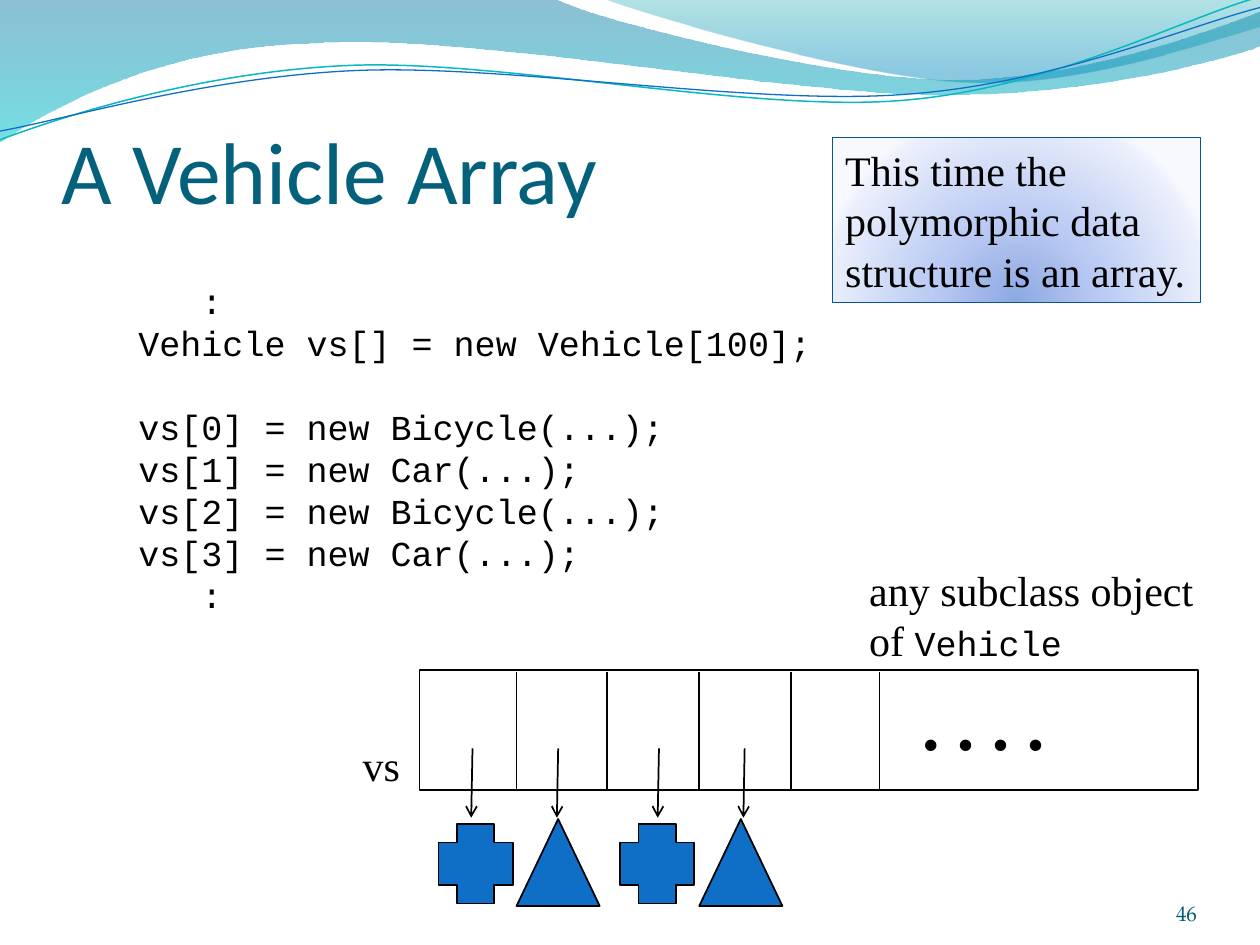
from dataclasses import dataclass
from lxml import etree
from pptx import Presentation
from pptx.dml.color import RGBColor
from pptx.enum.shapes import MSO_CONNECTOR as Link, MSO_SHAPE as Kind
from pptx.enum.text import MSO_ANCHOR as Anchor, PP_ALIGN as Align
from pptx.oxml import parse_xml
from pptx.oxml.ns import nsdecls, qn
from pptx.util import Inches, Pt


@dataclass(frozen=True)
class Theme:
    ink: str = "000000"
    blue: str = "0F6FC6"
    teal: str = "0AB8BF"
    head: str = "04617B"
    page: str = "045D75"
    edge: str = "095295"
    sans: str = "Calibri"
    serif: str = "Times New Roman"
    mono: str = "Courier New"
    folio: str = "TeX Gyre Pagella"
    title: int = 50
    dots: int = 40
    body: int = 24
    code: int = 20
    small: int = 12


T = Theme()
DOWN = '<a:lin ang="5400000" scaled="0"/>'
GLOW = ('<a:path path="circle"><a:fillToRect l="50000" t="130000" '
        'r="50000" b="-30000"/></a:path>')

# Each wave: start point, then line ends (2 numbers) and Bezier curves (6)
BAND = [(0, 0), (4.4, -.01), (4.76, .17, 6.64, .63, 7.58, .63),
        (8.53, .63, 9.58, .26, 10, .09), (10.01, .36),
        (9.83, .44, 8.7, .76, 7.46, .75), (6.22, .75, 3.82, .28, 2.57, .34),
        (1.29, .36, .46, .83, -.01, 1.13), (0, 0)]
CREST = [(4.79, -.01), (5.09, .11, 6.82, .62, 7.69, .65),
         (8.56, .69, 9.61, .32, 10, .21), (10, 0), (4.79, -.01)]
LINES = [
    (T.teal, .85, [(0, 1.11), (.48, .93, 1.58, .57, 2.77, .52),
                   (3.95, .47, 5.93, .89, 7.13, .8),
                   (8.33, .71, 9.38, .15, 9.98, -.02)]),
    (T.blue, .75, [(0, 1.04), (.47, .96, 1.64, .61, 2.83, .56),
                   (4.03, .51, 5.97, .84, 7.17, .75),
                   (8.36, .67, 9.41, .21, 10, .06)])]

CODE = ["\t\t:", "Vehicle vs[] = new Vehicle[100];", "",
        "vs[0] = new Bicycle(...);", "vs[1] = new Car(...);",
        "vs[2] = new Bicycle(...);", "vs[3] = new Car(...);", "\t:"]


def color(code):
    return RGBColor.from_string(code)


def paint(shape, fill=None, edge=None, width=1):
    shape.shadow.inherit = False
    if fill:
        shape.fill.solid()
        shape.fill.fore_color.rgb = color(fill)
    else:
        shape.fill.background()
    if edge:
        shape.line.color.rgb = color(edge)
        shape.line.width = Pt(width)
    else:
        shape.line.fill.background()


def blend(shape, stops, form):
    """Swap the solid fill for a gradient of (position, colour, alpha)."""
    marks = "".join(
        f'<a:gs pos="{pos * 1000}"><a:srgbClr val="{code}">'
        f'<a:alpha val="{alpha * 1000}"/></a:srgbClr></a:gs>'
        for pos, code, alpha in stops)
    grad = parse_xml(f'<a:gradFill {nsdecls("a")} rotWithShape="1">'
                     f'<a:gsLst>{marks}</a:gsLst>{form}</a:gradFill>')
    props = shape._element.spPr
    props.replace(props.find(qn("a:solidFill")), grad)


def style(para, font, size, code=T.ink, bold=False):
    for run in para.runs:
        run.font.name, run.font.size = font, Pt(size)
        run.font.color.rgb, run.font.bold = color(code), bold


def label(slide, box, text, font, size, code=T.ink, bold=False,
          wrap=True, pad=(.1, .05, .1, .05), anchor=Anchor.TOP):
    frame = slide.shapes.add_textbox(*map(Inches, box)).text_frame
    frame.word_wrap, frame.vertical_anchor = wrap, anchor
    (frame.margin_left, frame.margin_top,
     frame.margin_right, frame.margin_bottom) = map(Inches, pad)
    frame.text = text
    for para in frame.paragraphs:
        style(para, font, size, code, bold)
    return frame


def stroke(slide, start, end, arrow=False):
    link = slide.shapes.add_connector(
        Link.STRAIGHT, *map(Inches, (*start, *end)))
    link.line.color.rgb, link.line.width = color(T.ink), Pt(1)
    if arrow:
        tip = etree.SubElement(link.line._get_or_add_ln(), qn("a:tailEnd"))
        tip.set("type", "arrow")
    etree.SubElement(link._element.spPr, qn("a:effectLst"))


def wave(slide, x, y, steps, close):
    """Draw the knots as lines, then join each three into a Bezier curve."""
    knots = [(Inches(x + step[i]), Inches(y + step[i + 1]))
             for step in steps for i in range(0, len(step), 2)]
    pen = slide.shapes.build_freeform(*knots[0])
    pen.add_line_segments(knots[1:], close=close)
    shape = pen.convert_to_shape()
    sides = iter(list(shape._element.iter(qn("a:lnTo"))))
    for step in steps[1:]:
        first = next(sides)
        if len(step) == 6:
            curve = etree.Element(qn("a:cubicBezTo"))
            first.addprevious(curve)
            for side in (first, next(sides), next(sides)):
                curve.append(side[0])
                side.getparent().remove(side)
    return shape


def waves(slide, x, y):
    for steps, stops in (
            (BAND, [(0, "0074A1", 45), (100, "00C6CF", 55)]),
            (CREST, [(0, "00A1A9", 30), (80, "008BBF", 45)])):
        area = wave(slide, x, y, steps, True)
        paint(area, T.teal)
        blend(area, stops, DOWN)
    for code, width, steps in LINES:
        paint(wave(slide, x, y, steps, False), None, code, width)


def code_block(slide, box):
    frame = label(slide, box, "", T.mono, T.code)
    para = frame.paragraphs[0]
    para.text = "\v".join(CODE)
    style(para, T.mono, T.code)
    para.line_spacing = Pt(24)
    props = para._p.get_or_add_pPr()
    props.set("marL", str(Inches(.3)))
    props.set("indent", str(Inches(-.3)))


def note(slide, box):
    card = slide.shapes.add_shape(Kind.RECTANGLE, *map(Inches, box))
    paint(card, "8DA8E3", T.edge, .75)
    blend(card, [(0, "8DA8E3", 100), (43, "BBCBF3", 100),
                 (93, "EAEFFB", 100), (100, "F7F9FF", 100)], GLOW)
    frame = card.text_frame
    frame.word_wrap = False
    frame.text = "This time the\npolymorphic data\nstructure is an array."
    for para in frame.paragraphs:
        para.alignment = Align.LEFT
        style(para, T.serif, T.body)


def array(slide, x, y, w, h):
    # Cells
    row = slide.shapes.add_shape(Kind.RECTANGLE, *map(Inches, (x, y, w, h)))
    paint(row, None, T.ink)
    for dx in (.77, 1.49, 2.22, 2.95, 3.65):
        stroke(slide, (x + dx, y + .01), (x + dx, y + h + .01))
    label(slide, (x + 3.89, y + .03, 2.24, .78), ". . . .",
          T.serif, T.dots, bold=True)
    label(slide, (x - .55, y + .5, .5, .5), "vs", T.serif, T.body, wrap=False)
    # Objects and the arrows to them
    plus = (Kind.CROSS, 1.22, .59, .63)
    peak = (Kind.ISOSCELES_TRIANGLE, 1.18, .66, .69)
    for (kind, dy, wide, high), dx, tip in (
            (plus, .15, .42), (peak, .77, 1.1),
            (plus, 1.59, 1.9), (peak, 2.22, 2.58)):
        item = slide.shapes.add_shape(
            kind, *map(Inches, (x + dx, y + dy, wide, high)))
        paint(item, T.blue, T.ink)
        stroke(slide, (x + tip, y + .62), (x + tip - .01, y + 1.17), True)
    # Caption
    frame = label(slide, (x + 3.47, y - .89, 2.88, .91),
                  "any subclass object\nof ", T.serif, T.body, wrap=False)
    name = frame.paragraphs[1].add_run()
    name.text = "Vehicle"
    name.font.name, name.font.size = T.mono, Pt(T.code)
    name.font.color.rgb = color(T.ink)


def main():
    deck = Presentation()
    deck.slide_width, deck.slide_height = Inches(10), Inches(7.5)
    slide = deck.slides.add_slide(deck.slide_layouts[6])
    waves(slide, 0, 0)
    label(slide, (.49, .51, 9, 1.25), "A Vehicle Array", T.sans, T.title,
          T.head, pad=(0, .05, 0, 0), anchor=Anchor.BOTTOM)
    code_block(slide, (.7, 2.17, 8.91, 2.83))
    array(slide, 3.33, 5.32, 6.18, .95)
    note(slide, (6.61, 1.09, 2.92, 1.31))
    page = label(slide, (8.67, 6.95, .83, .4), "46", T.folio, T.small, T.page,
                 pad=(0, 0, 0, 0), anchor=Anchor.BOTTOM)
    page.paragraphs[0].alignment = Align.RIGHT
    deck.save("out.pptx")


if __name__ == "__main__":
    main()
